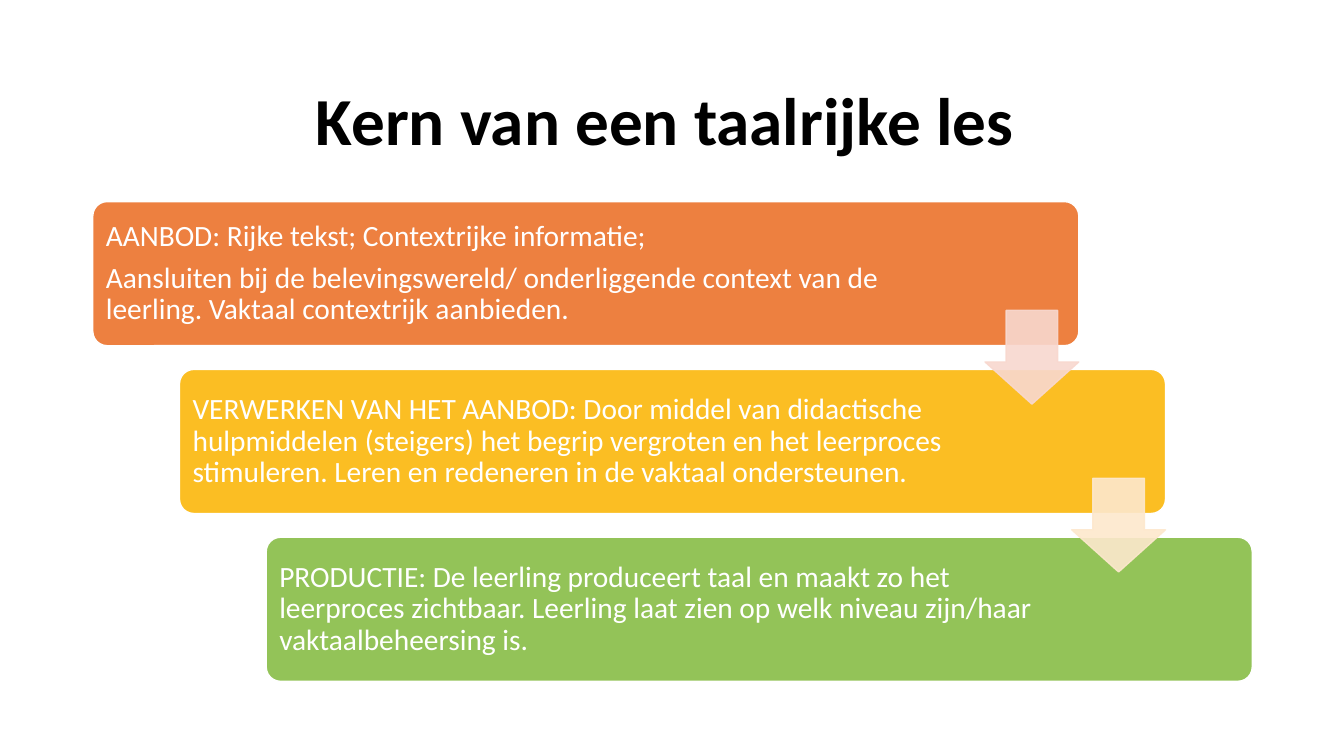
from dataclasses import dataclass

from lxml import etree
from pptx import Presentation
from pptx import util as u
from pptx.dml import color
from pptx.enum import shapes, text
from pptx.oxml import ns

HUES = {
    "black": "000000",
    "white": "FFFFFF",
    "orange": "ED8040",
    "yellow": "FBBE23",
    "green": "93C358",
    "rose": "F8D8CF",
    "cream": "FDE8CD",
}
FONT = "Calibri"

# Staircase: first step, offset to the next, and sizes
LEFT, TOP = 0.92, 2.0
STEP_X, STEP_Y = 0.86, 1.665
WIDE, HIGH = 9.78, 1.43
PAD = 0.04
ARROW = 0.93
ARROW_X, ARROW_Y = 8.85, 1.08


@dataclass
class Step:
    hue: str
    wide: float
    lines: list[str]


STEPS = [
    Step("orange", 8.23, [
        "AANBOD: Rijke tekst; Contextrijke informatie;",
        "Aansluiten bij de belevingswereld/ onderliggende context van de "
        "leerling. Vaktaal contextrijk aanbieden.",
    ]),
    Step("yellow", 7.9, [
        "VERWERKEN VAN HET AANBOD: Door middel van didactische hulpmiddelen "
        "(steigers) het begrip vergroten en het leerproces stimuleren. "
        "Leren en redeneren in de vaktaal ondersteunen.",
    ]),
    Step("green", 7.9, [
        "PRODUCTIE: De leerling produceert taal en maakt zo het leerproces "
        "zichtbaar. Leerling laat zien op welk niveau zijn/haar "
        "vaktaalbeheersing is.",
    ]),
]
ARROWS = ["rose", "cream"]


def rgb(hue: str) -> color.RGBColor:
    return color.RGBColor.from_string(HUES[hue])


def write(box, lines: list[str], *, size: float, hue: str, bold: bool = False,
          align=text.PP_ALIGN.LEFT, inset: float = 0.1, after: float = 0) -> None:
    """Fill a box with paragraphs in one format."""
    frame = box.text_frame
    frame.word_wrap = True
    frame.auto_size = text.MSO_AUTO_SIZE.NONE
    frame.vertical_anchor = text.MSO_ANCHOR.MIDDLE
    frame.margin_left = frame.margin_right = u.Inches(inset)
    frame.margin_top = frame.margin_bottom = u.Inches(inset)
    for i, line in enumerate(lines):
        para = frame.paragraphs[0] if i == 0 else frame.add_paragraph()
        para.alignment = align
        para.line_spacing = 0.9
        para.space_before = u.Pt(0)
        para.space_after = u.Pt(after)
        run = para.add_run()
        run.text = line
        run.font.name = FONT
        run.font.size = u.Pt(size)
        run.font.bold = bold
        run.font.color.rgb = rgb(hue)


def block(slide, kind, x: float, y: float, wide: float, high: float, *,
          fill: str, line: str, adjust: list[float]):
    """Draw one filled preset shape."""
    shape = slide.shapes.add_shape(
        kind, u.Inches(x), u.Inches(y), u.Inches(wide), u.Inches(high))
    shape.shadow.inherit = False
    shape.fill.solid()
    shape.fill.fore_color.rgb = rgb(fill)
    shape.line.color.rgb = rgb(line)
    shape.line.width = u.Pt(1)
    for i, value in enumerate(adjust):
        shape.adjustments[i] = value
    return shape


def fade(shape, share: int) -> None:
    """Set the opacity of fill and line, in percent."""
    for node in shape.element.spPr.iter(ns.qn("a:srgbClr")):
        etree.SubElement(node, ns.qn("a:alpha"), val=str(share * 1000))


def main() -> None:
    deck = Presentation()
    deck.slide_width, deck.slide_height = u.Inches(13.33), u.Inches(7.5)
    slide = deck.slides.add_slide(deck.slide_layouts[5])

    # Title
    title = slide.shapes.title
    title.left, title.top = u.Inches(0.92), u.Inches(0.61)
    title.width, title.height = u.Inches(11.5), u.Inches(1.24)
    write(title, ["Kern van een taalrijke les "], size=48, hue="black",
          bold=True, align=text.PP_ALIGN.CENTER)

    # Steps with their texts
    for i, step in enumerate(STEPS):
        x, y = LEFT + i * STEP_X, TOP + i * STEP_Y
        block(slide, shapes.MSO_SHAPE.ROUNDED_RECTANGLE, x, y, WIDE, HIGH,
              fill=step.hue, line="white", adjust=[0.1])
        box = slide.shapes.add_textbox(
            u.Inches(x + PAD), u.Inches(y + PAD),
            u.Inches(step.wide), u.Inches(HIGH - 2 * PAD))
        write(box, step.lines, size=21, hue="white", inset=0.09, after=7)

    # Arrows between the steps
    for i, hue in enumerate(ARROWS):
        arrow = block(slide, shapes.MSO_SHAPE.DOWN_ARROW,
                      LEFT + ARROW_X + i * STEP_X, TOP + ARROW_Y + i * STEP_Y,
                      ARROW, ARROW, fill=hue, line=hue, adjust=[0.55, 0.45])
        fade(arrow, 90)

    deck.save("out.pptx")


if __name__ == "__main__":
    main()
